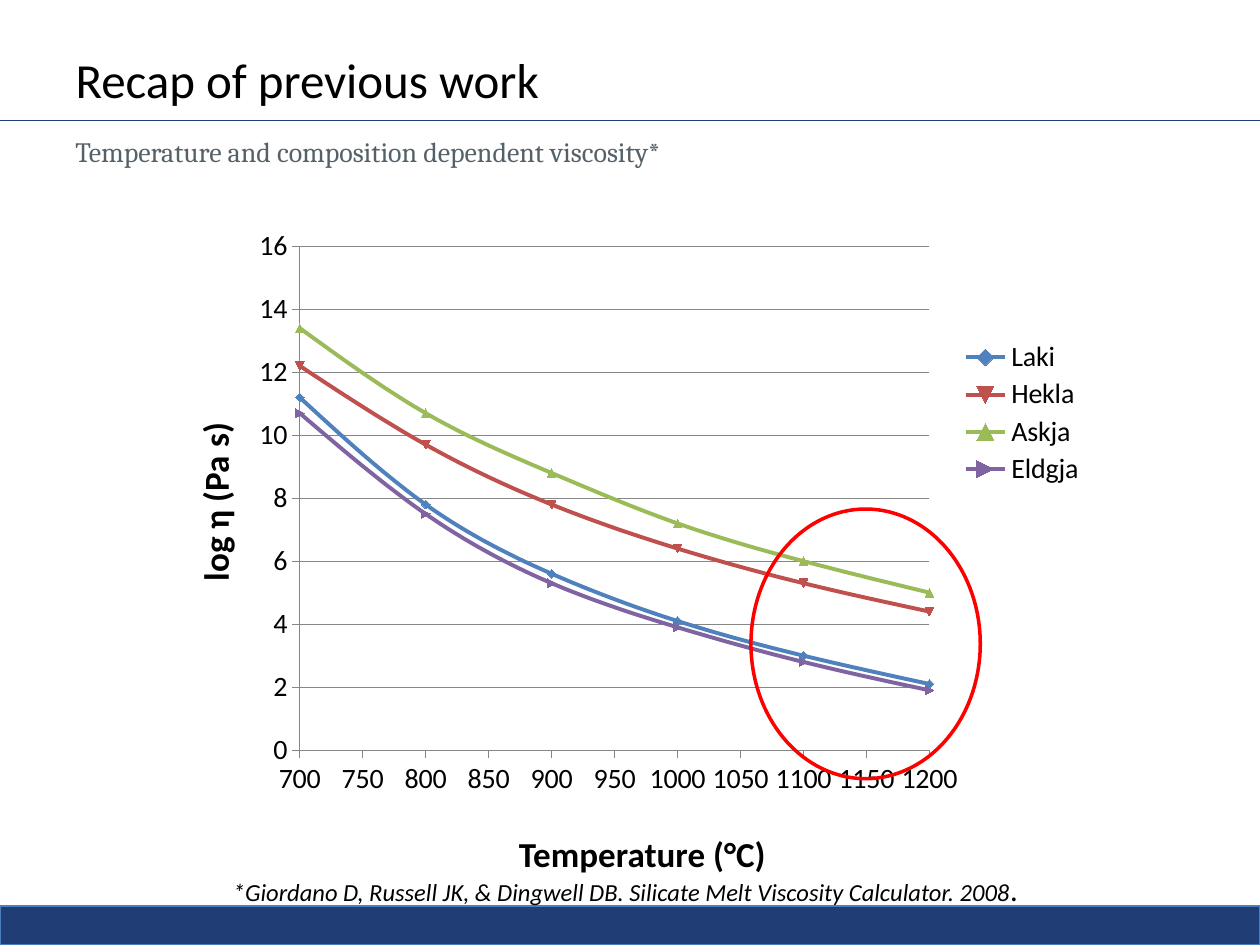
from dataclasses import dataclass

import pptx
import pptx.chart.data
import pptx.dml.color
import pptx.enum.chart
import pptx.enum.shapes
import pptx.enum.text
import pptx.oxml
import pptx.oxml.ns
import pptx.util
from pptx.util import Inches, Pt


@dataclass(frozen=True)
class Theme:
    heading_font: str = "Calibri"
    subtitle_font: str = "Cambria"
    black: str = "000000"
    grey: str = "556169"
    navy: str = "203D75"
    bar_edge: str = "4B7EBC"
    grid: str = "868686"
    highlight: str = "FF0000"
    title_size: int = 28
    label_size: int = 20
    full_stop_size: int = 18
    body_size: int = 16
    citation_size: int = 14


THEME = Theme()
TEMPERATURES = range(700, 1201, 100)
VISCOSITIES = [
    ("Laki", "4F81BD", [11.2, 7.8, 5.6, 4.1, 3, 2.1]),
    ("Hekla", "C0504D", [12.2, 9.7, 7.8, 6.4, 5.3, 4.4]),
    ("Askja", "9BBB59", [13.4, 10.7, 8.8, 7.2, 6, 5]),
    ("Eldgja", "8064A2", [10.7, 7.5, 5.3, 3.9, 2.8, 1.9]),
]


def rgb(value):
    return pptx.dml.color.RGBColor.from_string(value)


def add_run(paragraph, text, size, font=THEME.heading_font, color=THEME.black,
            bold=False, italic=False):
    run = paragraph.add_run()
    run.text = text
    run.font.name = font
    run.font.size = Pt(size)
    run.font.color.rgb = rgb(color)
    run.font.bold = bold
    run.font.italic = italic


def add_text_box(slide, left, top, width, height, wrap=True):
    """Add an empty text box and return it with its first paragraph."""
    box = slide.shapes.add_textbox(Inches(left), Inches(top), Inches(width), Inches(height))
    frame = box.text_frame
    frame.word_wrap = wrap
    frame.auto_size = pptx.enum.text.MSO_AUTO_SIZE.SHAPE_TO_FIT_TEXT
    return box, frame.paragraphs[0]


def add_axis_label(slide, text, left, top, width, rotation=0):
    box, paragraph = add_text_box(slide, left, top, width, 0.41, wrap=False)
    box.rotation = rotation
    add_run(paragraph, text, THEME.label_size, bold=True)


def add_outlined_shape(slide, kind, left, top, width, height, line, line_width, fill=None):
    shape = slide.shapes.add_shape(kind, Inches(left), Inches(top), Inches(width), Inches(height))
    shape.shadow.inherit = False
    if fill:
        shape.fill.solid()
        shape.fill.fore_color.rgb = rgb(fill)
    else:
        shape.fill.background()
    shape.line.color.rgb = rgb(line)
    shape.line.width = Pt(line_width)


def add_title_rule(slide):
    rule = slide.shapes.add_connector(
        pptx.enum.shapes.MSO_CONNECTOR.STRAIGHT,
        Inches(0), Inches(0.96), Inches(10.04), Inches(0.96))
    rule.line.color.rgb = rgb(THEME.navy)
    rule.line.width = Pt(0.5)
    properties = rule._element.spPr
    properties.append(properties.makeelement(pptx.oxml.ns.qn("a:effectLst"), {}))


def set_title(slide, text):
    title = slide.shapes.title
    title.left, title.top = Inches(0.5), Inches(0.3)
    title.width, title.height = Inches(6.22), Inches(0.66)
    title.text_frame.vertical_anchor = pptx.enum.text.MSO_ANCHOR.MIDDLE
    paragraph = title.text_frame.paragraphs[0]
    paragraph.alignment = pptx.enum.text.PP_ALIGN.LEFT
    add_run(paragraph, text, THEME.title_size)


def manual_layout(x, y, width, height, target=""):
    """Return a c:layout element with places as fractions of the chart."""
    return pptx.oxml.parse_xml(
        f'<c:layout {pptx.oxml.ns.nsdecls("c")}><c:manualLayout>{target}'
        '<c:xMode val="edge"/><c:yMode val="edge"/>'
        f'<c:x val="{x}"/><c:y val="{y}"/><c:w val="{width}"/><c:h val="{height}"/>'
        '</c:manualLayout></c:layout>')


def place_chart_parts(chart):
    qn = pptx.oxml.ns.qn
    plot_area = chart._chartSpace.chart.plotArea
    legend = chart.legend._element
    for parent in (plot_area, legend):
        for layout in parent.findall(qn("c:layout")):
            parent.remove(layout)
    plot_area.insert(0, manual_layout(0.14, 0.03, 0.68, 0.83, '<c:layoutTarget val="inner"/>'))
    legend.find(qn("c:legendPos")).addnext(manual_layout(0.84, 0.18, 0.16, 0.25))


def format_axis(axis, low, high, step, gridlines):
    axis.minimum_scale, axis.maximum_scale = low, high
    axis.major_unit = step
    axis.major_tick_mark = pptx.enum.chart.XL_TICK_MARK.OUTSIDE
    axis.tick_labels.font.size = Pt(THEME.body_size)
    axis.tick_labels.number_format = "General"
    axis.tick_labels.number_format_is_linked = False
    axis.has_major_gridlines = gridlines
    lines = [axis.format.line]
    if gridlines:
        lines.append(axis.major_gridlines.format.line)
    for line in lines:
        line.color.rgb = rgb(THEME.grid)
        line.width = Pt(0.75)


def add_viscosity_chart(slide):
    data = pptx.chart.data.XyChartData()
    for name, _, values in VISCOSITIES:
        series = data.add_series(name)
        for temperature, viscosity in zip(TEMPERATURES, values):
            series.add_data_point(temperature, viscosity)
    chart = slide.shapes.add_chart(
        pptx.enum.chart.XL_CHART_TYPE.XY_SCATTER_SMOOTH,
        Inches(1.35), Inches(1.81), Inches(7.35), Inches(4.82), data).chart
    chart.has_title = False
    chart.font.name = THEME.heading_font
    chart.font.size = Pt(THEME.body_size)
    chart.font.color.rgb = rgb(THEME.black)
    chart.plots[0].vary_by_categories = False
    for series, (_, color, _) in zip(chart.plots[0].series, VISCOSITIES):
        series.format.line.color.rgb = rgb(color)
        series.format.line.width = Pt(2.25)
        series.marker.format.fill.solid()
        series.marker.format.fill.fore_color.rgb = rgb(color)
        series._element.get_or_add_smooth().val = True
    format_axis(chart.category_axis, 700, 1200, 50, gridlines=False)
    format_axis(chart.value_axis, 0, 16, 2, gridlines=True)
    chart.has_legend = True
    chart.legend.position = pptx.enum.chart.XL_LEGEND_POSITION.RIGHT
    chart.legend.include_in_layout = False
    chart.legend.font.size = Pt(THEME.body_size)
    place_chart_parts(chart)


def main():
    presentation = pptx.Presentation()
    presentation.slide_width, presentation.slide_height = Inches(10), Inches(7.5)
    slide = presentation.slides.add_slide(presentation.slide_layouts.get_by_name("Title Only"))
    shapes = pptx.enum.shapes.MSO_SHAPE

    add_outlined_shape(slide, shapes.RECTANGLE, 0, 7.19, 10, 0.31,
                       THEME.bar_edge, 0.75, fill=THEME.navy)
    add_title_rule(slide)
    set_title(slide, "Recap of previous work")
    _, subtitle = add_text_box(slide, 0.5, 1.02, 9.1, 0.42)
    add_run(subtitle, "Temperature and composition dependent viscosity*",
            THEME.body_size, THEME.subtitle_font, THEME.grey)

    add_viscosity_chart(slide)
    add_axis_label(slide, "log η (Pa s)", 0.89, 3.7, 1.61, rotation=270)
    add_axis_label(slide, "Temperature (°C)", 4.02, 6.56, 2.32)

    _, citation = add_text_box(slide, 1.75, 6.86, 7.18, 0.4)
    add_run(citation, "*Giordano D, Russell JK, & Dingwell DB. "
            "Silicate Melt Viscosity Calculator. 2008", THEME.citation_size, italic=True)
    add_run(citation, ".", THEME.full_stop_size, italic=True)
    add_outlined_shape(slide, shapes.OVAL, 5.96, 4.04, 1.82, 2.14, THEME.highlight, 2)

    presentation.save("out.pptx")


if __name__ == "__main__":
    main()
